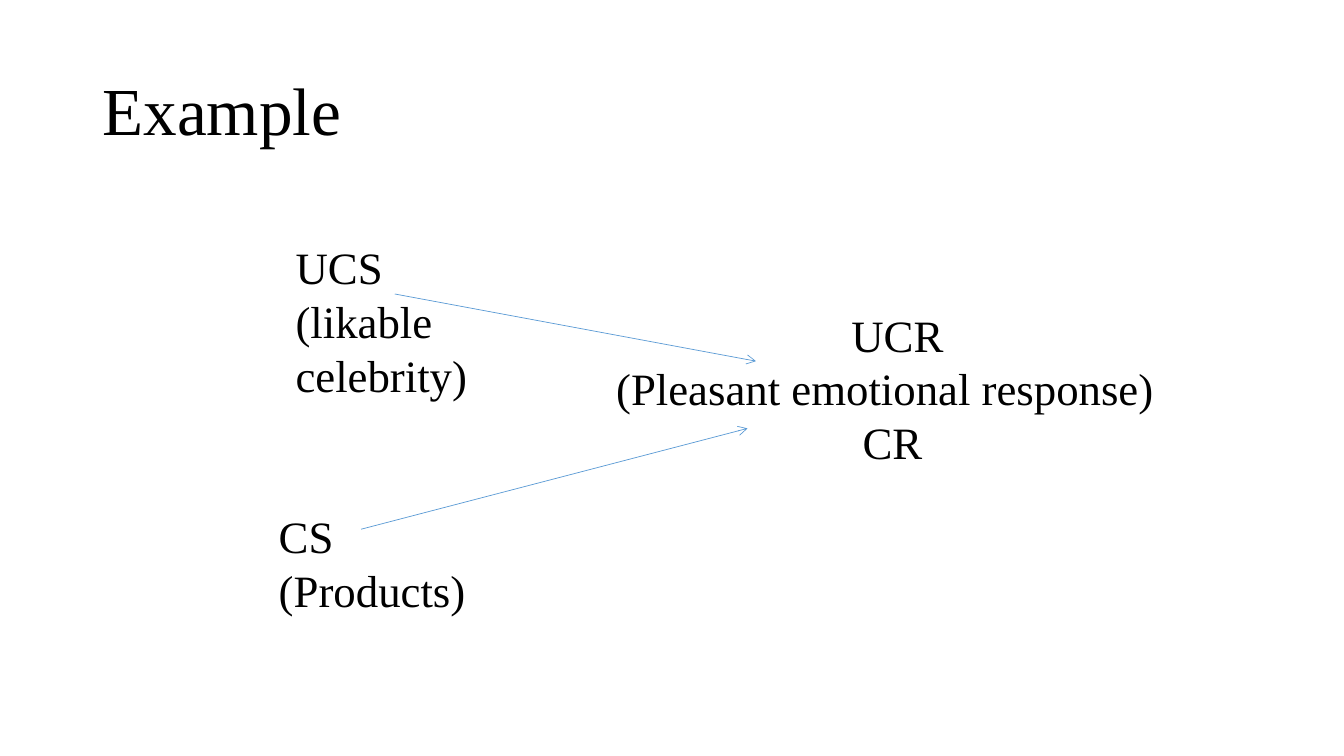
import dataclasses

import lxml.etree
import pptx
import pptx.dml.color
import pptx.enum.shapes
import pptx.enum.text
import pptx.oxml.ns
import pptx.util

Pt = pptx.util.Pt


@dataclasses.dataclass(frozen=True)
class Theme:
    font: str = "Times New Roman"
    text: str = "000000"
    arrow: str = "5B9BD5"
    title_size: int = 48
    label_size: int = 32
    arrow_width: float = 0.5


class SlideBuilder:
    def __init__(self, slide, theme):
        self.slide = slide
        self.theme = theme

    def style(self, paragraph, size):
        paragraph.font.name = self.theme.font
        paragraph.font.size = Pt(size)
        paragraph.font.color.rgb = pptx.dml.color.RGBColor.from_string(self.theme.text)

    def title(self, text, left, top, width, height):
        shape = self.slide.shapes.title
        shape.left, shape.top = Pt(left), Pt(top)
        shape.width, shape.height = Pt(width), Pt(height)
        frame = shape.text_frame
        frame.text = text
        frame.vertical_anchor = pptx.enum.text.MSO_ANCHOR.MIDDLE
        paragraph = frame.paragraphs[0]
        paragraph.alignment = pptx.enum.text.PP_ALIGN.LEFT
        paragraph.line_spacing = 0.9
        self.style(paragraph, self.theme.title_size)

    def label(self, lines, left, top, width, height, indents=()):
        shape = self.slide.shapes.add_textbox(Pt(left), Pt(top), Pt(width), Pt(height))
        frame = shape.text_frame
        frame.word_wrap = True
        frame.text = "\n".join(lines)
        for paragraph in frame.paragraphs:
            self.style(paragraph, self.theme.label_size)
        for paragraph, indent in zip(frame.paragraphs, indents):
            paragraph._p.get_or_add_pPr().set("marL", str(Pt(indent)))

    def arrow(self, start, end):
        connector = self.slide.shapes.add_connector(
            pptx.enum.shapes.MSO_CONNECTOR.STRAIGHT, *map(Pt, start + end)
        )
        connector.line.width = Pt(self.theme.arrow_width)
        connector.line.color.rgb = pptx.dml.color.RGBColor.from_string(self.theme.arrow)
        qualified = pptx.oxml.ns.qn
        line = connector.line._get_or_add_ln()
        lxml.etree.SubElement(line, qualified("a:tailEnd"), type="arrow")
        lxml.etree.SubElement(connector._element.spPr, qualified("a:effectLst"))


def main():
    presentation = pptx.Presentation()
    presentation.slide_width, presentation.slide_height = Pt(960), Pt(540)
    slide = presentation.slides.add_slide(presentation.slide_layouts[5])
    builder = SlideBuilder(slide, Theme())

    builder.title("Example", 66, 28.75, 828, 104.4)
    builder.label(["UCS", "(likable celebrity)"], 204, 168, 168, 124)
    builder.label(["CS", "(Products)"], 192, 360, 153.5, 85)
    builder.label(
        ["UCR", "(Pleasant emotional response)", "CR"],
        433, 216, 403, 124, indents=(168, 0, 176),
    )
    builder.arrow((282, 210), (540, 258))
    builder.arrow((258, 378), (534, 306))

    presentation.save("out.pptx")


if __name__ == "__main__":
    main()
